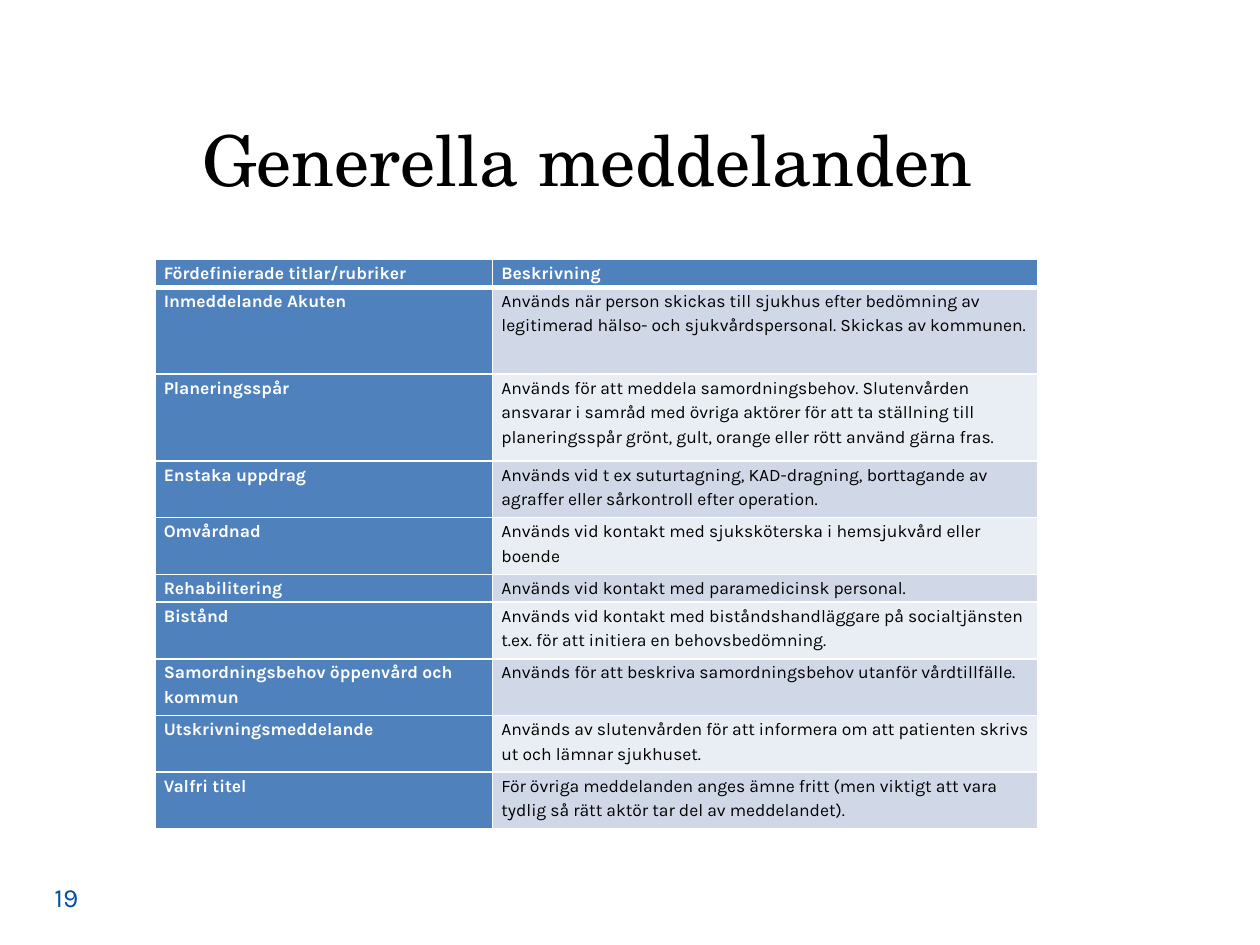
from lxml.etree import SubElement
from pptx import Presentation
from pptx.dml.color import RGBColor
from pptx.enum.text import MSO_ANCHOR, PP_ALIGN
from pptx.oxml.ns import qn
from pptx.util import Inches, Pt

TITLE = "Generella meddelanden"
PAGE = "19"
ROWS = [
    ("Fördefinierade titlar/rubriker", "Beskrivning", 0.22),
    ("Inmeddelande Akuten",
     "Används när person skickas till sjukhus efter bedömning av legitimerad "
     "hälso- och sjukvårdspersonal. Skickas av kommunen.", 0.69),
    ("Planeringsspår",
     "Används för att meddela samordningsbehov. Slutenvården ansvarar i samråd "
     "med övriga aktörer för att ta ställning till planeringsspår grönt, gult, "
     "orange eller rött använd gärna fras.", 0.69),
    ("Enstaka uppdrag",
     "Används vid t ex suturtagning, KAD-dragning, borttagande av agraffer "
     "eller sårkontroll efter operation.", 0.45),
    ("Omvårdnad",
     "Används vid kontakt med sjuksköterska i hemsjukvård eller boende", 0.45),
    ("Rehabilitering", "Används vid kontakt med paramedicinsk personal.", 0.22),
    ("Bistånd",
     "Används vid kontakt med biståndshandläggare på socialtjänsten t.ex. för "
     "att initiera en behovsbedömning.", 0.45),
    ("Samordningsbehov öppenvård och kommun",
     "Används för att beskriva samordningsbehov utanför vårdtillfälle.", 0.45),
    ("Utskrivningsmeddelande",
     "Används av slutenvården för att informera om att patienten skrivs ut och "
     "lämnar sjukhuset.", 0.45),
    ("Valfri titel",
     "För övriga meddelanden anges ämne fritt (men viktigt att vara tydlig så "
     "rätt aktör tar del av meddelandet).", 0.45),
]
COLS = (2.68, 4.33)
THEME = {
    "title": {"name": "TeX Gyre Schola", "size": Pt(40), "color": "000000"},
    "page": {"name": "Karla", "size": Pt(15), "color": "0050A5"},
    "head": {"name": "Karla", "size": Pt(10), "bold": True, "color": "FFFFFF"},
    "body": {"name": "Karla", "size": Pt(10), "bold": False, "color": "000000"},
    "fill": "4F81BD", "bands": ("E9EDF4", "D0D8E8"), "rule": "FFFFFF",
}
CELL = {"margin_left": Inches(0.07), "margin_right": Inches(0.07),
        "margin_top": 0, "margin_bottom": 0}
PARA = {"line_spacing": Pt(14), "space_after": Pt(6)}


def apply(item, vals):
    """Set each named value on the item."""
    for key, val in vals.items():
        if key == "color":
            item.color.rgb = RGBColor.from_string(val)
        else:
            setattr(item, key, val)


def write(frame, text, font, para):
    """Put one styled paragraph in a text frame."""
    par = frame.paragraphs[0]
    apply(par, para)
    run = par.add_run()
    run.text = text
    apply(run.font, font)


def label(slide, text, box, font, frame, para):
    """Add a wrapped text box."""
    area = slide.shapes.add_textbox(*map(Inches, box)).text_frame
    apply(area, {"word_wrap": True, **frame})
    write(area, text, font, para)


def edge(cell, top, base):
    """Rule the four sides of a cell."""
    props = cell._tc.get_or_add_tcPr()
    sides = (("L", 1), ("R", 1), ("T", top), ("B", base))
    for pos, (side, width) in enumerate(sides):
        line = SubElement(props, qn("a:ln" + side), w=str(Pt(width)))
        fill = SubElement(line, qn("a:solidFill"))
        SubElement(fill, qn("a:srgbClr"), val=THEME["rule"])
        props.insert(pos, line)


def grid(slide):
    """Build the table of titles and descriptions."""
    high = sum(row[2] for row in ROWS)
    table = slide.shapes.add_table(
        len(ROWS), len(COLS), Inches(1.23), Inches(2.06),
        Inches(sum(COLS)), Inches(high)).table
    for col, wide in zip(table.columns, COLS):
        col.width = Inches(wide)
    for r, (name, about, tall) in enumerate(ROWS):
        table.rows[r].height = Inches(tall)
        for c, text in enumerate((name, about)):
            cell = table.cell(r, c)
            head = r == 0 or c == 0
            tint = THEME["fill"] if head else THEME["bands"][r % 2]
            apply(cell, CELL)
            cell.fill.solid()
            cell.fill.fore_color.rgb = RGBColor.from_string(tint)
            edge(cell, 3 if r == 1 else 1, 3 if r == 0 else 1)
            write(cell.text_frame, text, THEME["head" if head else "body"], PARA)


def main():
    """Build and save the slide."""
    deck = Presentation()
    apply(deck, {"slide_width": Inches(10), "slide_height": Inches(7.5)})
    slide = deck.slides.add_slide(deck.slide_layouts[6])
    grid(slide)
    label(slide, TITLE, (1.51, 0.57, 7.76, 1.38), THEME["title"],
          {"vertical_anchor": MSO_ANCHOR.MIDDLE}, {"alignment": PP_ALIGN.LEFT})
    label(slide, PAGE, (0.17, 6.89, 0.55, 0.4), THEME["page"],
          {"vertical_anchor": MSO_ANCHOR.BOTTOM}, {"alignment": PP_ALIGN.RIGHT})
    deck.save("out.pptx")


if __name__ == "__main__":
    main()
